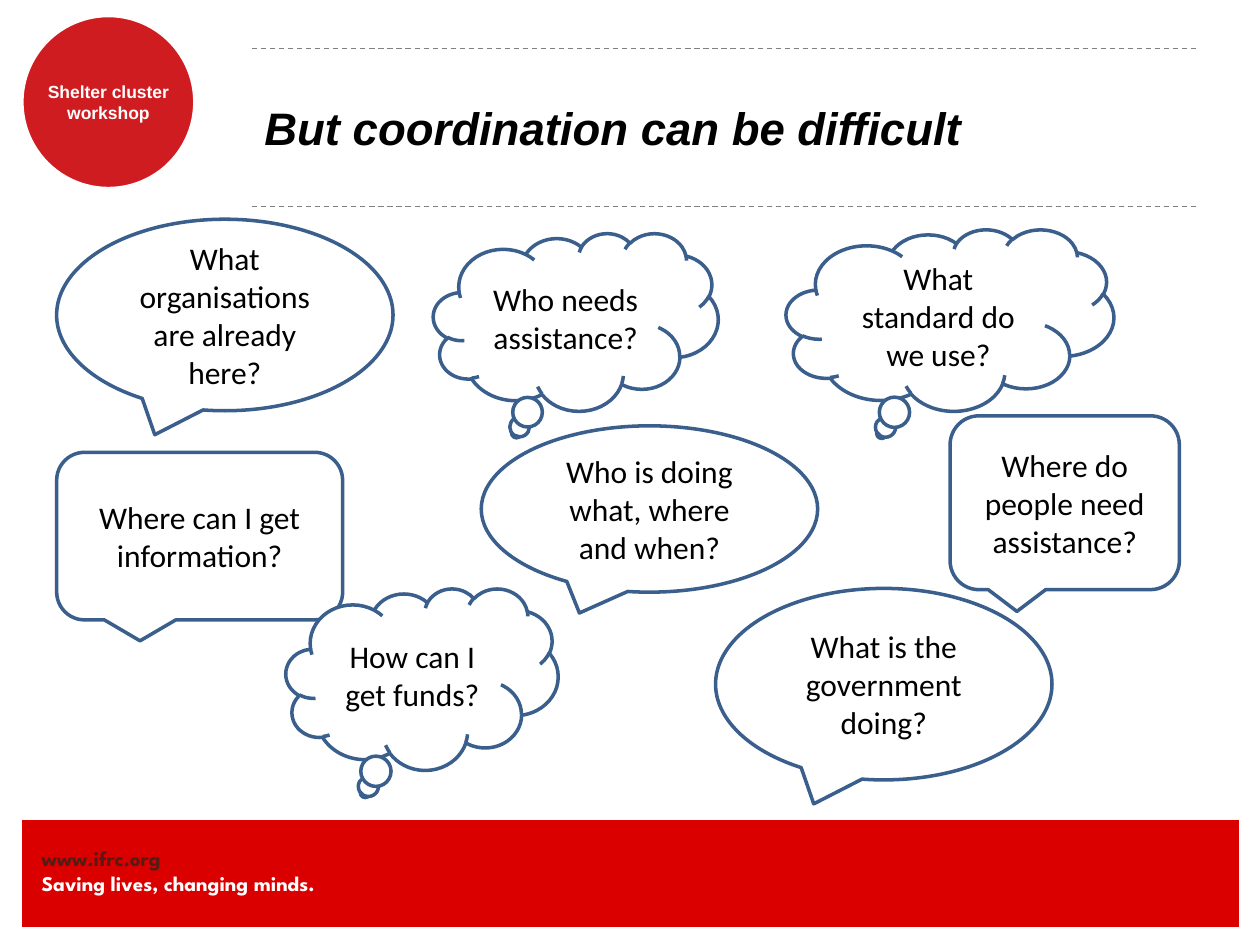
from dataclasses import dataclass

from lxml.etree import SubElement
from pptx import Presentation
from pptx.dml.color import RGBColor
from pptx.enum.dml import MSO_LINE
from pptx.enum.shapes import MSO_CONNECTOR, MSO_SHAPE
from pptx.enum.text import MSO_ANCHOR, PP_ALIGN
from pptx.oxml.ns import qn
from pptx.util import Pt


@dataclass(frozen=True)
class Theme:
    footer_red: str = "DB0000"
    badge_red: str = "CF1C21"
    address_brown: str = "551C15"
    rule_grey: str = "808080"
    callout_blue: str = "3A5F8C"
    white: str = "FFFFFF"
    black: str = "000000"
    title_size: float = 26
    callout_size: float = 18
    footer_size: float = 12
    badge_size: float = 10
    heading_font: str = "Arial"
    body_font: str = "Calibri"
    footer_font: str = "League Spartan"


THEME = Theme()
ELLIPSE = MSO_SHAPE.OVAL_CALLOUT
CLOUD = MSO_SHAPE.CLOUD_CALLOUT
ROUNDED = MSO_SHAPE.ROUNDED_RECTANGULAR_CALLOUT

# Kind, box (left, top, width, height) relative to the callout area, question
CALLOUTS = [
    (ELLIPSE, (0, 0, 192.24, 109.44), "What organisations are already here?"),
    (CLOUD, (416.88, 5.76, 187.2, 103.68), "What standard do we use?"),
    (ROUNDED, (510.48, 112.32, 131.04, 99.36), "Where do people need assistance?"),
    (CLOUD, (215.28, 7.92, 162.72, 101.52), "Who needs assistance?"),
    (ROUNDED, (0, 133.2, 163.44, 95.76), "Where can I get information?"),
    (ELLIPSE, (242.64, 118.08, 192.24, 95.04), "Who is doing what, where and when?"),
    (CLOUD, (131.04, 210.96, 155.52, 103.68), "How can I get funds?"),
    (ELLIPSE, (376.56, 210.96, 192.24, 109.44), "What is the government doing?"),
]


def to_points(box):
    return [Pt(length) for length in box]


def write_text(shape, lines, align=PP_ALIGN.LEFT, anchor=MSO_ANCHOR.TOP, inset=None):
    """Write one paragraph per (text, colour, font format) line."""
    frame = shape.text_frame
    frame_format = {"word_wrap": True, "vertical_anchor": anchor}
    if inset is not None:
        for side in ("left", "top", "right", "bottom"):
            frame_format[f"margin_{side}"] = Pt(inset)
    for name, value in frame_format.items():
        setattr(frame, name, value)
    for index, (text, color, font_format) in enumerate(lines):
        paragraph = frame.add_paragraph() if index else frame.paragraphs[0]
        paragraph.alignment = align
        run = paragraph.add_run()
        run.text = text
        run.font.color.rgb = RGBColor.from_string(color)
        for name, value in font_format.items():
            setattr(run.font, name, value)


def add_filled_shape(slide, kind, box, fill, line, line_width):
    shape = slide.shapes.add_shape(kind, *to_points(box))
    shape.shadow.inherit = False
    shape.fill.solid()
    shape.fill.fore_color.rgb = RGBColor.from_string(fill)
    shape.line.color.rgb = RGBColor.from_string(line)
    shape.line.width = Pt(line_width)
    return shape


def add_footer(slide, box):
    left, top, width, height = box
    add_filled_shape(slide, MSO_SHAPE.RECTANGLE, box, THEME.footer_red, THEME.white, 0.75)
    text_box = slide.shapes.add_textbox(*to_points((left + 11.5, top + 15.1, 246.24, 28.8)))
    font_format = {"name": THEME.footer_font, "size": Pt(THEME.footer_size), "bold": True}
    lines = [
        ("www.ifrc.org", THEME.address_brown, font_format),
        ("Saving lives, changing minds.", THEME.white, font_format),
    ]
    write_text(text_box, lines, inset=0)


def add_badge(slide, box):
    left, top, width, height = box
    add_filled_shape(slide, MSO_SHAPE.OVAL, box, THEME.badge_red, THEME.white, 2.5)
    text_width, text_height = 90, 24.5
    text_box = slide.shapes.add_textbox(*to_points((
        left + (width - text_width) / 2, top + (height - text_height) / 2,
        text_width, text_height)))
    font_format = {"name": THEME.heading_font, "size": Pt(THEME.badge_size), "bold": True}
    write_text(text_box, [("Shelter cluster workshop", THEME.white, font_format)],
               align=PP_ALIGN.CENTER, inset=0)


def add_title_band(slide, box):
    """Place the title between two dashed rules."""
    left, top, width, height = box
    for y in (top, top + height):
        rule = slide.shapes.add_connector(
            MSO_CONNECTOR.STRAIGHT, *to_points((left, y, left + width, y)))
        rule.line.color.rgb = RGBColor.from_string(THEME.rule_grey)
        rule.line.width = Pt(0.75)
        rule.line.dash_style = MSO_LINE.DASH
        SubElement(rule.element.spPr, qn("a:effectLst"))
    title = slide.shapes.add_textbox(*to_points(box))
    font_format = {"name": THEME.heading_font, "size": Pt(THEME.title_size),
                   "bold": True, "italic": True}
    write_text(title, [("But coordination can be difficult", THEME.black, font_format)],
               anchor=MSO_ANCHOR.MIDDLE)


def add_callouts(slide, origin):
    area_left, area_top = origin
    font_format = {"name": THEME.body_font, "size": Pt(THEME.callout_size)}
    for kind, (left, top, width, height), question in CALLOUTS:
        callout = add_filled_shape(
            slide, kind, (area_left + left, area_top + top, width, height),
            THEME.white, THEME.callout_blue, 2)
        write_text(callout, [(question, THEME.black, font_format)],
                   align=PP_ALIGN.CENTER, anchor=MSO_ANCHOR.MIDDLE)


def main():
    presentation = Presentation()
    presentation.slide_width = Pt(720)
    presentation.slide_height = Pt(540)
    slide = presentation.slides.add_slide(presentation.slide_layouts[6])
    add_footer(slide, (12.24, 468, 696.24, 61.92))
    add_badge(slide, (12.24, 8.64, 99.36, 99.36))
    add_title_band(slide, (144, 27.9, 540, 90))
    add_callouts(slide, (32.4, 125.28))
    presentation.save("out.pptx")


if __name__ == "__main__":
    main()
